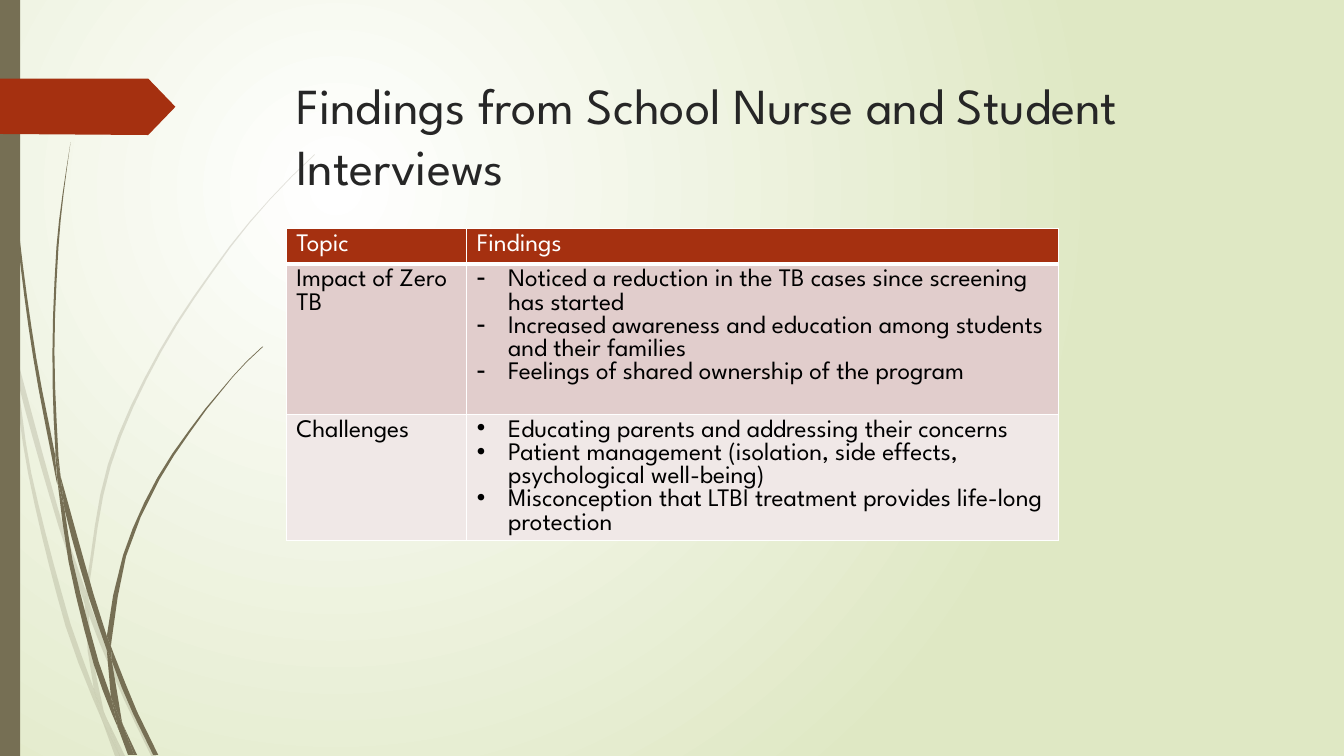
from lxml.etree import SubElement
from pptx import Presentation
from pptx.dml.color import RGBColor
from pptx.enum.shapes import MSO_SHAPE as Shape
from pptx.enum.text import MSO_ANCHOR as Anchor
from pptx.oxml.ns import qn
from pptx.util import Inches, Pt

# Content
TITLE = "Findings from School Nurse and Student Interviews"
HEADER = ("Topic", "Findings")
FINDINGS = [
    ("Impact of Zero TB", "-", [
        "Noticed a reduction in the TB cases since screening has started",
        "Increased awareness and education among students and their families",
        "Feelings of shared ownership of the program"]),
    ("Challenges", "•", [
        "Educating parents and addressing their concerns",
        "Patient management (isolation, side effects, psychological well-being)",
        "Misconception that LTBI treatment provides life-long protection"]),
]
FONT = "League Spartan"
COLORS = {"stem": "766F54", "accent": "A53010", "title": "262626", "white": "FFFFFF",
          "black": "000000", "edge": "DFE8C4", "odd": "E1CDCC", "even": "F0E8E7"}

# Layout in inches
WIDTH, HEIGHT = 13.33, 7.5
LEFT, TABLE_TOP = 2.84, 2.27
COLUMNS = (1.79, 5.87)
ROWS = (0.35, 1.49, 1.25)
INDENT = 0.31
BAND = 0.2

# Outlines in inches: each leaf is a closed run of points
PALE_GRASS = [
    [(0.11, 3.5), (0.09, 3.22), (0, 2.82), (0, 2.99), (0.1, 3.44)],
    [(0.58, 5.22), (0.84, 5.99), (0.85, 5.86), (0.62, 5.2), (0.14, 3.45), (0.17, 3.76)],
    [(0.92, 6.07), (0.88, 5.96), (0.88, 6.1), (1.23, 6.94), (1.5, 7.5), (1.55, 7.5),
     (1.27, 6.92)],
    [(1.19, 7.5), (1.24, 7.5), (1.05, 7.11)],
    [(0.93, 6.83), (0.7, 6.19), (0.31, 4.69), (0.17, 3.76), (0.11, 3.5), (0.28, 4.7),
     (0.65, 6.21), (0.92, 6.93), (1.01, 7.14), (0.99, 7.07)],
    [(0.84, 5.99), (0.87, 6.46), (0.93, 6.83), (0.96, 6.92), (1.05, 7.11), (1.03, 7.06),
     (0.91, 6.46), (0.88, 6.1), (0.88, 6.08)],
    [(0.88, 5.84), (1.1, 4.62), (1.6, 3.49), (2.29, 2.45), (2.68, 1.98), (2.9, 1.75),
     (3.12, 1.54), (3.12, 1.53), (2.89, 1.75), (2.68, 1.97), (2.28, 2.44), (1.58, 3.48),
     (1.07, 4.61), (0.85, 5.84), (0.85, 5.86), (0.88, 5.96)],
    [(1.01, 7.14), (1.14, 7.5), (1.19, 7.5)],
    [(0.88, 6.08), (0.88, 6.1), (0.88, 5.96), (0.85, 5.86), (0.84, 5.99)],
    [(0.96, 6.92), (0.93, 6.83), (0.99, 7.07), (1.01, 7.14), (1.19, 7.5), (1.05, 7.11)],
]
DARK_GRASS = [
    [(0.07, 1.1), (0.17, 2.33), (0.33, 3.55), (0.56, 4.77), (0.57, 4.81), (0.55, 4.57),
     (0.55, 4.53), (0.36, 3.55), (0.19, 2.32), (0.08, 1.09), (0.05, 0.48), (0.04, 0),
     (0.03, 0), (0.04, 0.48)],
    [(0.88, 5.92), (1.06, 6.45), (1.06, 6.31), (0.93, 5.9), (0.6, 4.72), (0.64, 5.05)],
    [(1.13, 6.49), (1.1, 6.41), (1.11, 6.56), (1.32, 7.08), (1.52, 7.49), (1.57, 7.49),
     (1.36, 7.06)],
    [(1.1, 6.91), (0.98, 6.57), (0.72, 5.56), (0.64, 5.05), (0.57, 4.77), (0.68, 5.57),
     (0.93, 6.59), (1.11, 7.08), (1.17, 7.22), (1.16, 7.17)],
    [(0.6, 4.72), (0.58, 4.53), (0.54, 3.49), (0.58, 2.45), (0.63, 1.93), (0.7, 1.41),
     (0.62, 1.93), (0.56, 2.45), (0.52, 3.49), (0.55, 4.49)],
    [(1.33, 7.49), (1.36, 7.49), (1.22, 7.19)],
    [(0.57, 4.77), (0.64, 5.05), (0.6, 4.72), (0.55, 4.49), (0.55, 4.53)],
    [(1.11, 6.33), (1.25, 5.52), (1.58, 4.76), (2.05, 4.06), (2.31, 3.74), (2.45, 3.59),
     (2.61, 3.44), (2.6, 3.44), (2.45, 3.58), (2.31, 3.73), (2.04, 4.05), (1.56, 4.74),
     (1.22, 5.51), (1.06, 6.31), (1.1, 6.41)],
    [(1.17, 7.22), (1.27, 7.49), (1.31, 7.49)],
    [(1.06, 6.45), (1.1, 6.91), (1.16, 7.06), (1.22, 7.19), (1.21, 7.16), (1.11, 6.56),
     (1.09, 6.51)],
    [(1.06, 6.45), (1.09, 6.51), (1.11, 6.56), (1.1, 6.41), (1.06, 6.31)],
    [(1.16, 7.06), (1.1, 6.91), (1.16, 7.17), (1.17, 7.22), (1.3, 7.49), (1.33, 7.49),
     (1.22, 7.19)],
]
ARROW = [(0, 0.78), (1.47, 0.78), (1.74, 1.06), (1.47, 1.34), (0, 1.33)]
STEPS_PER_INCH = 3
CORNER_COSINE = 0.77


def color(name):
    return RGBColor.from_string(COLORS[name])


def paint(shape, name, alpha=100):
    shape.shadow.inherit = False
    shape.fill.solid()
    shape.fill.fore_color.rgb = color(name)
    shape.line.fill.background()
    if alpha < 100:
        tint = next(shape.element.iter(qn("a:srgbClr")))
        SubElement(tint, qn("a:alpha"), val=str(alpha * 1000))


def smooth(outline):
    """Round gentle bends with Hermite curves and keep sharp corners."""
    points = [complex(*point) for point in outline]
    count = len(points)
    bends = []
    for index, point in enumerate(points):
        before, after = point - points[index - 1], points[(index + 1) % count] - point
        cosine = (before * after.conjugate()).real / abs(before) / abs(after)
        along = before + after
        bends.append(along / abs(along) if cosine > CORNER_COSINE else None)
    curve = []
    for index, start in enumerate(points):
        following = (index + 1) % count
        side = points[following] - start
        leave, arrive = [side if bends[end] is None else bends[end] * abs(side)
                         for end in (index, following)]
        steps = 1 if leave == arrive else max(1, round(abs(side) * STEPS_PER_INCH))
        for step in range(steps):
            t = step / steps
            spot = (start + side * t * t * (3 - 2 * t)
                    + leave * t * (1 - t) ** 2 - arrive * t * t * (1 - t))
            curve.append((Inches(spot.real), Inches(spot.imag)))
    return curve


def draw(shapes, outline, name, alpha=100):
    first, *rest = smooth(outline)
    builder = shapes.build_freeform(*first)
    builder.add_line_segments(rest, close=True)
    paint(builder.convert_to_shape(), name, alpha)


def write(frame, lines, size, spacing, name, bullet=None):
    frame.word_wrap = True
    frame.text = "\n".join(lines)
    for para in frame.paragraphs:
        para.line_spacing = Pt(spacing)
        for span in para.runs:
            span.font.name, span.font.size = FONT, Pt(size)
            span.font.color.rgb = color(name)
        if bullet:
            props = para._p.get_or_add_pPr()
            props.set("marL", str(Inches(INDENT)))
            props.set("indent", str(-Inches(INDENT)))
            SubElement(props, qn("a:buChar"), char=bullet)


def fill_cell(cell, lines, fill, ink, bottom=1, bullet=None):
    write(cell.text_frame, lines, 18, 16.6, ink, bullet)
    props = cell._tc.get_or_add_tcPr()
    for side, width in (("L", 1), ("R", 1), ("T", 1), ("B", bottom)):
        border = SubElement(props, qn(f"a:ln{side}"), w=str(Pt(width)))
        solid = SubElement(border, qn("a:solidFill"))
        SubElement(solid, qn("a:srgbClr"), val=COLORS["white"])
    cell.fill.solid()
    cell.fill.fore_color.rgb = color(fill)


deck = Presentation()
deck.slide_width, deck.slide_height = Inches(WIDTH), Inches(HEIGHT)
page = deck.slides.add_slide(deck.slide_layouts[6])

# Background glow
glow = page.background.fill
glow.gradient()
for stop, name in zip(glow.gradient_stops, ("white", "edge")):
    stop.color.rgb = color(name)
gradient = next(page.element.iter(qn("a:gradFill")))
gradient.remove(gradient.find(qn("a:lin")))
circle = SubElement(gradient, qn("a:path"), {"path": "circle"})
SubElement(circle, qn("a:fillToRect"), l="50000", t="50000", r="100000", b="100000")

# Grass, side band and arrow
for leaves, alpha in ((PALE_GRASS, 20), (DARK_GRASS, 100)):
    tuft = page.shapes.add_group_shape()
    for leaf in leaves:
        draw(tuft.shapes, leaf, "stem", alpha)
band = page.shapes.add_shape(Shape.RECTANGLE, 0, 0, Inches(BAND), Inches(HEIGHT))
paint(band, "stem")
draw(page.shapes, ARROW, "accent")

# Title
box = page.shapes.add_textbox(Inches(LEFT), Inches(0.68), Inches(9.75), Inches(0.59))
box.text_frame.vertical_anchor = Anchor.TOP
write(box.text_frame, [TITLE], 36, 43.6, "title")

# Findings table
table = page.shapes.add_table(len(ROWS), len(COLUMNS), Inches(LEFT), Inches(TABLE_TOP),
                              Inches(sum(COLUMNS)), Inches(sum(ROWS))).table
for column, width in zip(table.columns, COLUMNS):
    column.width = Inches(width)
for row, height in zip(table.rows, ROWS):
    row.height = Inches(height)
for index, label in enumerate(HEADER):
    fill_cell(table.cell(0, index), [label], "accent", "white", bottom=3)
for index, (topic, bullet, points) in enumerate(FINDINGS, 1):
    fill = "odd" if index % 2 else "even"
    fill_cell(table.cell(index, 0), [topic], fill, "black")
    fill_cell(table.cell(index, 1), points, fill, "black", bullet=bullet)

deck.save("out.pptx")
